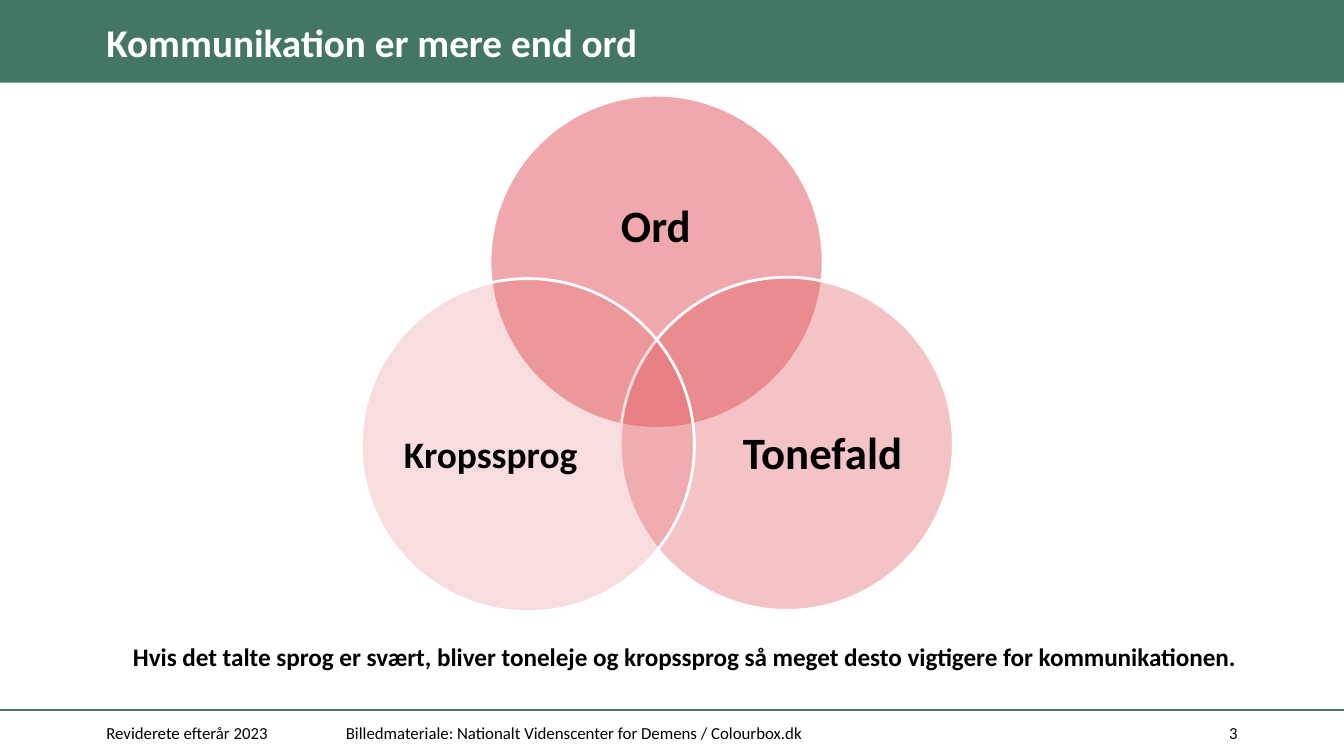
from lxml.etree import SubElement
from pptx import Presentation
from pptx.dml.color import RGBColor
from pptx.enum.shapes import MSO_CONNECTOR, MSO_SHAPE
from pptx.enum.text import MSO_ANCHOR, PP_ALIGN
from pptx.oxml.ns import qn
from pptx.util import Emu, Pt

GREEN = RGBColor(0x43, 0x77, 0x63)
RED = RGBColor(0xE0, 0x55, 0x5A)
WHITE = RGBColor(0xFF, 0xFF, 0xFF)
BLACK = RGBColor(0x00, 0x00, 0x00)

EMU_PER_PX = 9525
WIDTH, HEIGHT = 960, 540


def px(*lengths):
    return [Emu(length * EMU_PER_PX) for length in lengths]


class SlideBuilder:
    """Holds the style and the current slide."""

    font_name = "Calibri"

    def __init__(self, slide):
        self.slide = slide
        self.shapes = slide.shapes

    def set_text(self, shape, text, size, color=BLACK, bold=False, align=PP_ALIGN.LEFT,
                 anchor=MSO_ANCHOR.MIDDLE, insets=(10, 5, 10, 5), line_spacing=None):
        frame = shape.text_frame
        frame.text = text
        frame.word_wrap = True
        frame.vertical_anchor = anchor
        (frame.margin_left, frame.margin_top,
         frame.margin_right, frame.margin_bottom) = px(*insets)
        paragraph = frame.paragraphs[0]
        paragraph.alignment = align
        paragraph.line_spacing = line_spacing
        font = paragraph.font
        font.name, font.size, font.bold = self.font_name, Pt(size), bold
        font.color.rgb = color

    def title(self, text, left, top, width, height):
        title = self.shapes.title
        title.left, title.top, title.width, title.height = px(left, top, width, height)
        self.set_text(title, text, 21, WHITE, bold=True, insets=(10, 0, 0, 0),
                      line_spacing=0.9)
        self.shapes.element.append(title.element)  # in front of the header bar

    def text(self, text, left, top, width, height, size, **style):
        box = self.shapes.add_textbox(*px(left, top, width, height))
        self.set_text(box, text, size, **style)

    def bar(self, left, top, width, height):
        bar = self.shapes.add_shape(MSO_SHAPE.RECTANGLE, *px(left, top, width, height))
        bar.shadow.inherit = False
        bar.fill.solid()
        bar.fill.fore_color.rgb = GREEN
        bar.line.fill.background()

    def rule(self, top):
        rule = self.shapes.add_connector(MSO_CONNECTOR.STRAIGHT, *px(0, top, WIDTH, top))
        rule.line.color.rgb = GREEN
        rule.line.width = Pt(1)
        SubElement(rule.element.spPr, qn("a:effectLst"))

    def circle(self, left, top, diameter, opacity):
        circle = self.shapes.add_shape(MSO_SHAPE.OVAL, *px(left, top, diameter, diameter))
        circle.shadow.inherit = False
        circle.fill.solid()
        circle.fill.fore_color.rgb = RED
        color = circle.element.spPr.find(qn("a:solidFill")).find(qn("a:srgbClr"))
        SubElement(color, qn("a:alpha"), val=str(opacity * 1000))
        circle.line.color.rgb = WHITE
        circle.line.width = Pt(1.5)


def main():
    presentation = Presentation()
    presentation.slide_width, presentation.slide_height = px(WIDTH, HEIGHT)
    title_only = presentation.slide_layouts[5]
    builder = SlideBuilder(presentation.slides.add_slide(title_only))

    # Header and footer rule
    builder.bar(0, 0, WIDTH, 59)
    builder.rule(507)
    builder.title("Kommunikation er mere end ord", 66, 11, 714, 42)

    # Venn diagram: circle corner, opacity, label box, label size
    venn = [
        ("Ord", (350, 68), 50, (381, 109, 175, 108), 24),
        ("Tonefald", (443, 198), 35, (516, 259, 143, 132), 24),
        ("Kropssprog", (258, 199), 20, (279, 260, 143, 132), 20),
    ]
    for label, corner, opacity, label_box, size in venn:
        builder.circle(*corner, 238, opacity)
        builder.text(label, *label_box, size, bold=True, align=PP_ALIGN.CENTER,
                     insets=(0, 0, 0, 0), line_spacing=0.9)

    # Conclusion
    builder.text("Hvis det talte sprog er svært, bliver toneleje og kropssprog "
                 "så meget desto vigtigere for kommunikationen.",
                 85, 453, 812, 32, 13.5, bold=True, anchor=MSO_ANCHOR.TOP)

    # Footer
    footer = [
        ("Reviderete efterår 2023", 66, 161, PP_ALIGN.LEFT),
        ("Billedmateriale: Nationalt Videnscenter for Demens / Colourbox.dk",
         237, 605, PP_ALIGN.LEFT),
        ("3", 850, 44, PP_ALIGN.RIGHT),
    ]
    for text, left, width, align in footer:
        builder.text(text, left, 509, width, 29, 9, align=align)

    presentation.save("out.pptx")


if __name__ == "__main__":
    main()
